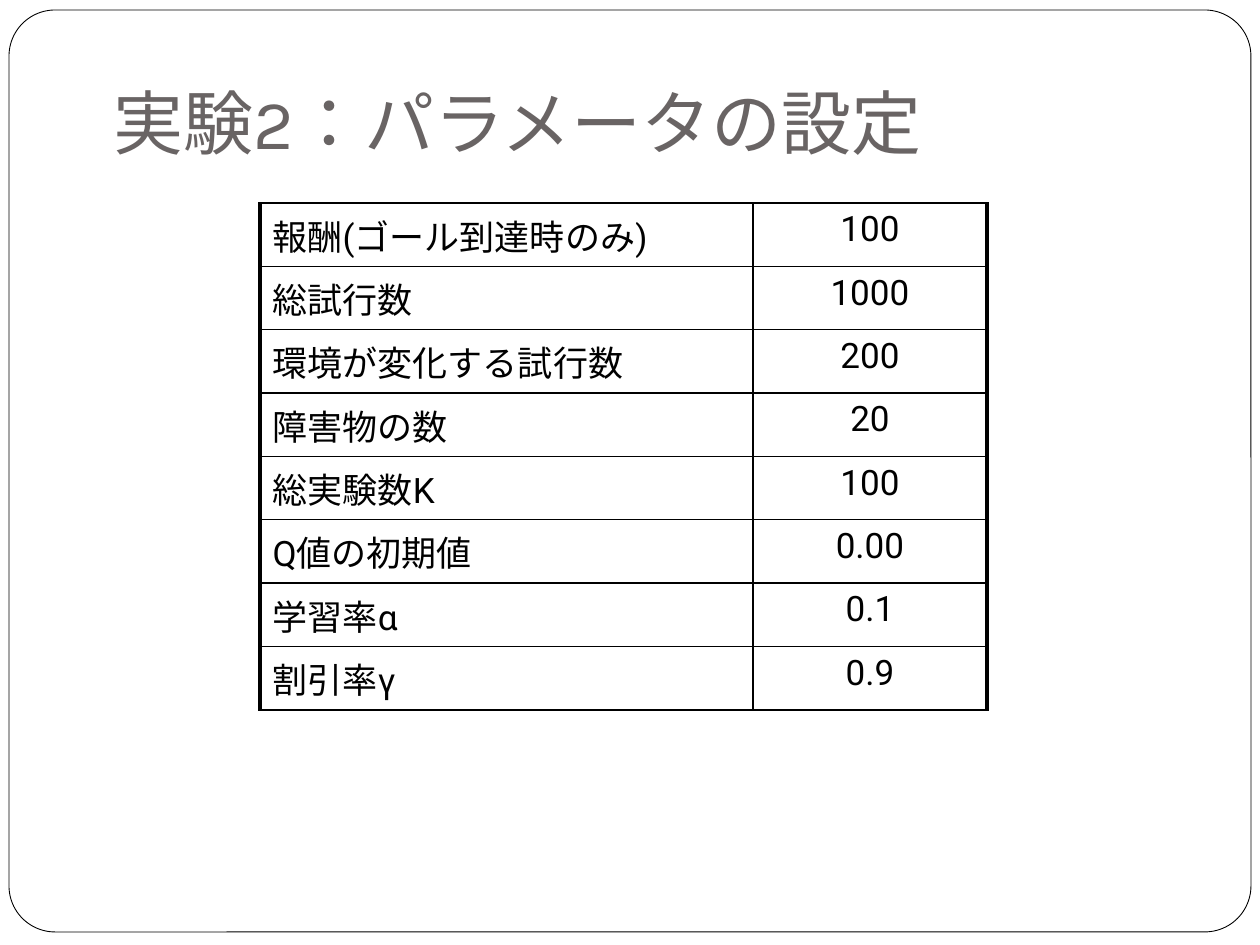
from lxml.etree import SubElement
from pptx import Presentation
from pptx.dml.color import RGBColor
from pptx.enum.lang import MSO_LANGUAGE_ID as Language
from pptx.enum.shapes import MSO_SHAPE as Shape
from pptx.enum.text import MSO_ANCHOR as Anchor, PP_ALIGN as Align
from pptx.oxml.ns import qn
from pptx.util import Pt

EMU_PER_PX = 914400 / 126
WHITE = RGBColor(0xFF, 0xFF, 0xFF)
BLACK = RGBColor(0x00, 0x00, 0x00)
GREY = RGBColor(0x69, 0x64, 0x64)
THIN, THICK = Pt(1), Pt(2.25)

TITLE_FORMAT = {"name": "Karla", "size": Pt(40), "language_id": Language.JAPANESE}
CELL_FORMAT = {"name": "Roboto", "size": Pt(20), "language_id": Language.JAPANESE}
PARAMETERS = [
    ("報酬(ゴール到達時のみ)", "100"),
    ("総試行数", "1000"),
    ("環境が変化する試行数", "200"),
    ("障害物の数", "20"),
    ("総実験数K", "100"),
    ("Q値の初期値", "0.00"),
    ("学習率α", "0.1"),
    ("割引率γ", "0.9"),
]


def px(length):
    """Turn a length in px into EMU."""
    return round(length * EMU_PER_PX)


def write(paragraph, text, color, text_format):
    """Write one formatted run into a paragraph."""
    run = paragraph.add_run()
    run.text = text
    run.font.color.rgb = color
    for name, value in text_format.items():
        setattr(run.font, name, value)


def add_frame(slide, left, top, width, height):
    """Draw the rounded outline around the slide."""
    frame = slide.shapes.add_shape(
        Shape.ROUNDED_RECTANGLE, px(left), px(top), px(width), px(height))
    frame.adjustments[0] = 0.05
    frame.shadow.inherit = False
    frame.fill.solid()
    frame.fill.fore_color.rgb = WHITE
    frame.line.color.rgb = BLACK
    frame.line.width = Pt(0.5)


def add_title(slide, left, top, width, height, text):
    """Place the heading at the bottom of its box."""
    title = slide.shapes.add_textbox(px(left), px(top), px(width), px(height)).text_frame
    layout = {"word_wrap": True, "vertical_anchor": Anchor.BOTTOM,
              "margin_left": px(13), "margin_right": px(13),
              "margin_top": px(6), "margin_bottom": px(12)}
    for name, value in layout.items():
        setattr(title, name, value)
    write(title.paragraphs[0], text, GREY, TITLE_FORMAT)


def set_borders(cell, widths):
    """Give a cell black borders, one width for each side."""
    properties = cell._tc.get_or_add_tcPr()
    for position, (side, width) in enumerate(widths.items()):
        border = SubElement(properties, qn(f"a:ln{side}"), w=str(width))
        fill = SubElement(border, qn("a:solidFill"))
        SubElement(fill, qn("a:srgbClr"), val=str(BLACK))
        properties.insert(position, border)


def add_parameters(slide, left, top, column_widths, height, rows):
    """Build the table of parameter names and values in equal rows."""
    table = slide.shapes.add_table(
        len(rows), len(column_widths), px(left), px(top),
        px(sum(column_widths)), px(height)).table
    table.first_row = table.horz_banding = False
    for column, width in zip(table.columns, column_widths):
        column.width = px(width)
    columns = [
        (Align.LEFT, {"L": THICK, "R": THIN, "T": THIN, "B": THIN}),
        (Align.CENTER, {"L": THIN, "R": THICK, "T": THIN, "B": THIN}),
    ]
    for row, texts in enumerate(rows):
        for column, (text, (alignment, widths)) in enumerate(zip(texts, columns)):
            cell = table.cell(row, column)
            cell.fill.background()
            set_borders(cell, widths)
            paragraph = cell.text_frame.paragraphs[0]
            paragraph.alignment = alignment
            write(paragraph, text, BLACK, CELL_FORMAT)


def main():
    """Build and save the slide."""
    deck = Presentation()
    deck.slide_width, deck.slide_height = px(1260), px(945)
    slide = deck.slides.add_slide(deck.slide_layouts[6])
    add_frame(slide, 9, 10, 1242, 922)
    add_title(slide, 101, -25, 1074, 201, "実験2：パラメータの設定")
    add_parameters(slide, 260, 203, [493, 234], 507, PARAMETERS)
    deck.save("out.pptx")


if __name__ == "__main__":
    main()
